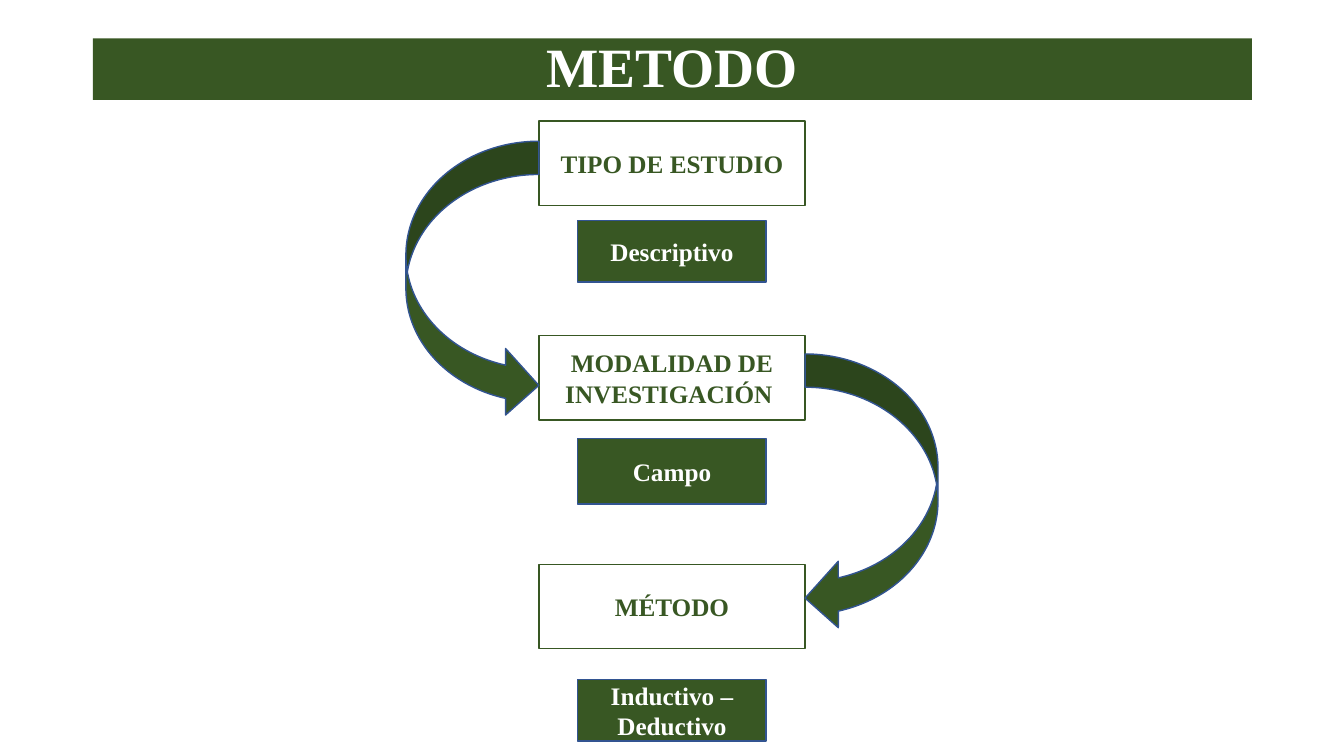
from pptx import Presentation
from pptx.dml.color import RGBColor
from pptx.enum import shapes, text
from pptx.util import Cm, Pt

GREEN, BLUE, WHITE = "385723", "325491", "FFFFFF"
FONT = "Times New Roman"
SLIDE_WIDTH = 33.87
TOPIC_WIDTH, TOPIC_HEIGHT = 6.71, 2.13
ANSWER_WIDTH = 4.75
ARROW_WIDTH, ARROW_HEIGHT = 3.35, 6.99

# topic, its top, answer, its top and height
STEPS = [
    ("TIPO DE ESTUDIO", 3.05, "Descriptivo", 5.56, 1.55),
    ("MODALIDAD DE INVESTIGACIÓN ", 8.46, "Campo", 11.05, 1.65),
    ("MÉTODO", 14.22, "Inductivo – Deductivo", 17.12, 1.55),
]


def paint(target, color):
    """Give a fill or a font colour a solid hex colour."""
    if hasattr(target, "solid"):
        target.solid()
        target = target.fore_color
    target.rgb = RGBColor.from_string(color)


def write(shape, words, size, color):
    frame = shape.text_frame
    frame.text = words
    frame.word_wrap = True
    frame.auto_size = text.MSO_AUTO_SIZE.NONE
    frame.vertical_anchor = text.MSO_ANCHOR.MIDDLE
    paragraph = frame.paragraphs[0]
    paragraph.alignment = text.PP_ALIGN.CENTER
    font = paragraph.runs[0].font
    font.name, font.size, font.bold = FONT, Pt(size), True
    paint(font.color, color)


def add_figure(slide, kind, left, top, width, height, fill, line):
    figure = slide.shapes.add_shape(
        kind, Cm(left), Cm(top), Cm(width), Cm(height))
    figure.shadow.inherit = False
    paint(figure.fill, fill)
    paint(figure.line.fill, line)
    figure.line.width = Pt(1)
    return figure


def add_box(slide, words, top, width, height, fill, line, color):
    """Add a labelled rectangle centred across the slide."""
    box = add_figure(slide, shapes.MSO_SHAPE.RECTANGLE,
                     (SLIDE_WIDTH - width) / 2, top, width, height, fill, line)
    write(box, words, 18, color)


def format_title(title, words):
    title.left, title.top = Cm(2.34), Cm(0.97)
    title.width, title.height = Cm(29.21), Cm(1.55)
    paint(title.fill, GREEN)
    write(title, words, 39.6, WHITE)
    title.text_frame.paragraphs[0].line_spacing = 0.9


def main():
    deck = Presentation()
    deck.slide_width, deck.slide_height = Cm(SLIDE_WIDTH), Cm(19.05)
    slide = deck.slides.add_slide(deck.slide_layouts[5])
    format_title(slide.shapes.title, "METODO")

    for topic, topic_top, answer, answer_top, answer_height in STEPS:
        add_box(slide, topic, topic_top, TOPIC_WIDTH, TOPIC_HEIGHT,
                WHITE, GREEN, GREEN)
        add_box(slide, answer, answer_top, ANSWER_WIDTH, answer_height,
                GREEN, BLUE, WHITE)

    topic_left = (SLIDE_WIDTH - TOPIC_WIDTH) / 2
    for kind, left, top in [
        (shapes.MSO_SHAPE.CURVED_RIGHT_ARROW, topic_left - ARROW_WIDTH, 3.56),
        (shapes.MSO_SHAPE.CURVED_LEFT_ARROW, topic_left + TOPIC_WIDTH, 8.92),
    ]:
        add_figure(slide, kind, left, top, ARROW_WIDTH, ARROW_HEIGHT,
                   GREEN, BLUE)

    deck.save("out.pptx")


if __name__ == "__main__":
    main()
